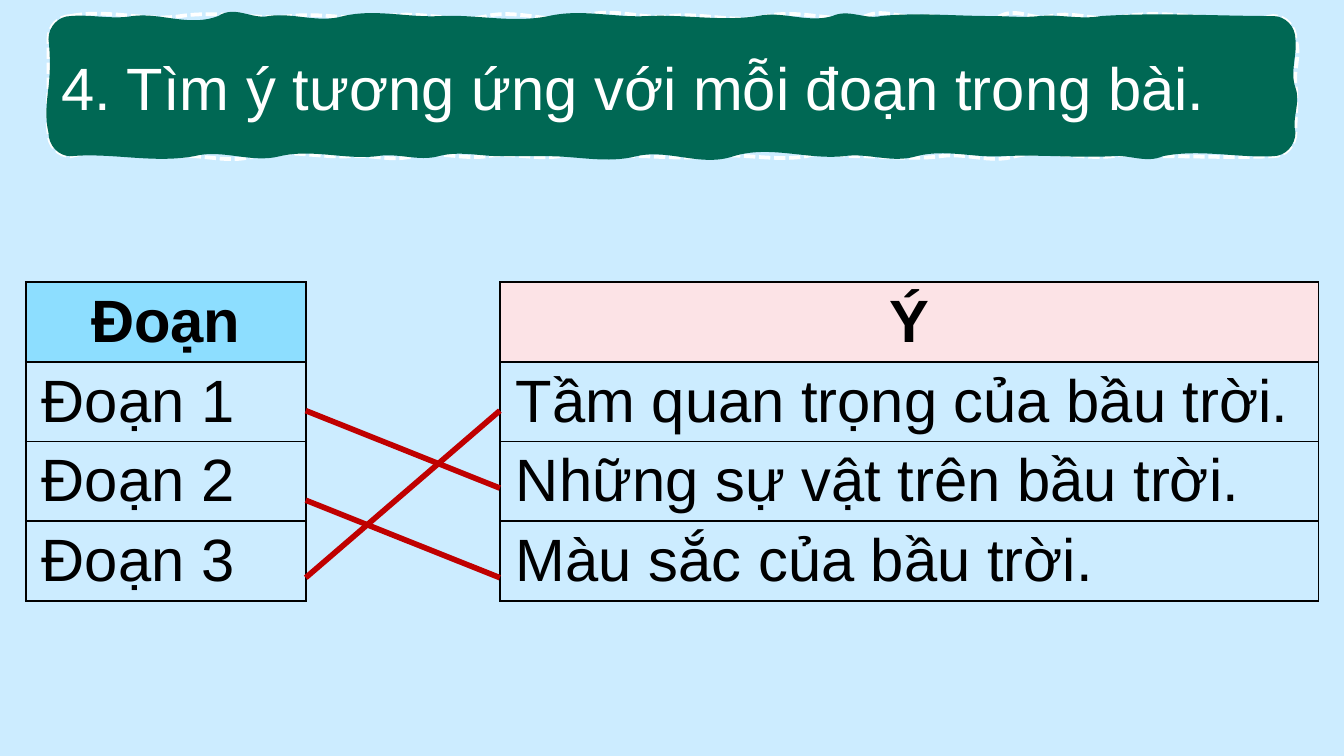
"""Build a matching exercise: paragraphs on the left, main ideas on the right."""
from lxml import etree
from pptx import Presentation
from pptx.dml.color import RGBColor
from pptx.enum.dml import MSO_LINE
from pptx.enum.shapes import MSO_CONNECTOR
from pptx.enum.text import MSO_ANCHOR, PP_ALIGN
from pptx.oxml.ns import qn
from pptx.util import Pt

STRAIGHT = MSO_CONNECTOR.STRAIGHT
DASH = MSO_LINE.SQUARE_DOT
MIDDLE = MSO_ANCHOR.MIDDLE
LEFT, CENTER, JUSTIFY = PP_ALIGN.LEFT, PP_ALIGN.CENTER, PP_ALIGN.JUSTIFY

SKY = RGBColor(0xCC, 0xEC, 0xFF)
GREEN = RGBColor(0x00, 0x68, 0x54)
WHITE = RGBColor(0xFF, 0xFF, 0xFF)
BLACK = RGBColor(0x00, 0x00, 0x00)
BLUE = RGBColor(0x8D, 0xDE, 0xFF)
PINK = RGBColor(0xFC, 0xE3, 0xE6)
RED = RGBColor(0xC0, 0x00, 0x00)

X1, Y1, X2, Y2 = 26, 8.6, 694, 83.7
TABLE_TOP, TABLE_HEIGHT, ROW_HEIGHT = 151.2, 182, 29.2
LEFT_X, LEFT_W, RIGHT_X, RIGHT_W = 13.8, 150, 267.8, 438.5

FILL_EDGES = {
    "top": [(38, 1), (71, 2), (117, 6), (144, 2), (184, 4), (236, 1),
            (294, 4), (347, 1), (406, 3), (446, 4), (472, 2), (531, 0),
            (557, 1), (590, 2), (682, 0)],
    "right": [(21, -1), (47, -3), (71, -2)],
    "bottom": [(682, -1), (623, -4), (596, -1), (537, -1), (491, -4),
               (452, -2), (393, -6), (341, -4), (294, 0), (268, 0),
               (235, -3), (202, -2), (150, -4), (104, -4), (38, -2)],
    "left": [(71, 2), (47, -1), (21, 1)],
}
DASH_EDGES = {
    "top": [(38, 4), (97, 3), (156, 2), (208, 3), (261, 4), (313, 5),
            (359, 2), (411, 4), (464, 4), (490, 1), (536, 5), (563, 3),
            (603, 4), (682, 5)],
    "right": [(21, -3), (45, -1), (71, 0)],
    "bottom": [(682, -1), (623, 0), (596, -2), (544, -4), (504, -2),
               (459, 0), (432, -3), (379, -2), (327, -1), (300, -2),
               (261, -2), (221, -3), (188, -1), (136, -4), (96, -1),
               (38, -5)],
    "left": [(71, 1), (45, 0), (21, 0)],
}


def wave(nodes, level, vertical=False):
    """Return the cubic curves of a wavy edge through (position, tilt) nodes."""
    curves = []
    for (a, tilt_a), (b, tilt_b) in zip(nodes, nodes[1:]):
        third = (b - a) / 3
        curve = [(a, level), (a + third, level - tilt_a),
                 (b - third, level + tilt_b), (b, level)]
        curves.append([(y, x) for x, y in curve] if vertical else curve)
    return curves


def corner(start, end, tip):
    """Return a rounded corner curve that bends towards its tip."""
    controls = [tuple(p + 0.55 * (q - p) for p, q in zip(point, tip))
                for point in (start, end)]
    return [start, *controls, end]


def wavy_outline(edges):
    """Join four wavy edges with rounded corners into one list of curves."""
    sides = [wave(edges["top"], Y1), wave(edges["right"], X2, True),
             wave(edges["bottom"], Y2), wave(edges["left"], X1, True)]
    tips = [(X2, Y1), (X2, Y2), (X1, Y2), (X1, Y1)]
    curves = []
    for side, following, tip in zip(sides, sides[1:] + sides[:1], tips):
        curves += side + [corner(side[-1][-1], following[0][0], tip)]
    return curves


def add_command(path, name, points):
    """Append one drawing command with its points to a path."""
    command = etree.SubElement(path, qn(f"a:{name}"))
    for x, y in points:
        etree.SubElement(command, qn("a:pt"), x=str(int(Pt(x - X1))), y=str(int(Pt(y - Y1))))


def add_curved_path(paths, edges, **flags):
    """Append a closed curved outline to a list of paths."""
    size = {"w": str(int(Pt(X2 - X1))), "h": str(int(Pt(Y2 - Y1)))}
    path = etree.SubElement(paths, qn("a:path"), **size, **flags)
    curves = wavy_outline(edges)
    add_command(path, "moveTo", curves[0][:1])
    for curve in curves:
        add_command(path, "cubicBezTo", curve[1:])
    etree.SubElement(path, qn("a:close"))


def set_text(tf, text, *, size=32, color=BLACK, bold=False, align=LEFT):
    """Write one formatted paragraph."""
    p = tf.paragraphs[0]
    p.alignment = align
    r = p.add_run()
    r.text = text
    r.font.name = "Arial"
    r.font.size = Pt(size)
    r.font.bold = bold
    r.font.color.rgb = color


def add_banner(s, text):
    """Draw the title banner, a wavy panel over a dashed edge."""
    builder = s.shapes.build_freeform(Pt(X1), Pt(Y1))
    builder.add_line_segments([(Pt(X2), Pt(Y1)), (Pt(X2), Pt(Y2)), (Pt(X1), Pt(Y2))])
    sp = builder.convert_to_shape()
    paths = sp._element.spPr.find(f".//{qn('a:pathLst')}")
    paths.remove(paths[0])
    add_curved_path(paths, DASH_EDGES, fill="none")
    add_curved_path(paths, FILL_EDGES, stroke="0")
    sp.shadow.inherit = False
    sp.fill.solid()
    sp.fill.fore_color.rgb = GREEN
    sp.line.color.rgb = WHITE
    sp.line.width = Pt(2)
    sp.line.dash_style = DASH
    tf = sp.text_frame
    tf.word_wrap = True
    tf.vertical_anchor = MIDDLE
    set_text(tf, text, color=WHITE, align=JUSTIFY)


def set_borders(cell):
    """Give a cell thin black borders on all sides."""
    props = cell._tc.get_or_add_tcPr()
    for i, side in enumerate(("lnL", "lnR", "lnT", "lnB")):
        ln = etree.Element(qn(f"a:{side}"), w=str(int(Pt(1))))
        fill = etree.SubElement(ln, qn("a:solidFill"))
        etree.SubElement(fill, qn("a:srgbClr"), val=str(BLACK))
        props.insert(i, ln)


def add_column(s, x, width, texts, header_color):
    """Add a one-column table with a coloured header."""
    frame = s.shapes.add_table(len(texts), 1, Pt(x), Pt(TABLE_TOP), Pt(width),
                               Pt(TABLE_HEIGHT))
    table = frame.table
    table.first_row = table.horz_banding = False
    for i, text in enumerate(texts):
        table.rows[i].height = Pt(ROW_HEIGHT)
        cell = table.cell(i, 0)
        cell.margin_left = cell.margin_right = Pt(8.6)
        cell.margin_top = cell.margin_bottom = Pt(3.4)
        header = i == 0
        if header:
            cell.fill.solid()
            cell.fill.fore_color.rgb = header_color
        else:
            cell.fill.background()
        set_borders(cell)
        set_text(cell.text_frame, text, bold=header, align=CENTER if header else LEFT)
    frame.height = Pt(TABLE_HEIGHT)


def add_match(s, y_from, y_to):
    """Draw a red line from the left table to the right one."""
    line = s.shapes.add_connector(STRAIGHT, Pt(LEFT_X + LEFT_W), Pt(y_from),
                                  Pt(RIGHT_X), Pt(y_to))
    line.line.color.rgb = RED
    line.line.width = Pt(3)
    etree.SubElement(line._element.spPr, qn("a:effectLst"))


def main():
    """Build and save the slide."""
    prs = Presentation()
    prs.slide_width, prs.slide_height = Pt(720), Pt(405)
    s = prs.slides.add_slide(prs.slide_layouts[6])
    s.background.fill.solid()
    s.background.fill.fore_color.rgb = SKY
    add_banner(s, "4. Tìm ý tương ứng với mỗi đoạn trong bài.")
    add_column(s, LEFT_X, LEFT_W, ["Đoạn", "Đoạn 1", "Đoạn 2", "Đoạn 3"], BLUE)
    add_column(s, RIGHT_X, RIGHT_W,
               ["Ý", "Tầm quan trọng của bầu trời.", "Những sự vật trên bầu trời.",
                "Màu sắc của bầu trời."], PINK)
    for y_from, y_to in ((220, 261.5), (268, 309.5), (309.5, 220)):
        add_match(s, y_from, y_to)
    prs.save("out.pptx")


if __name__ == "__main__":
    main()
